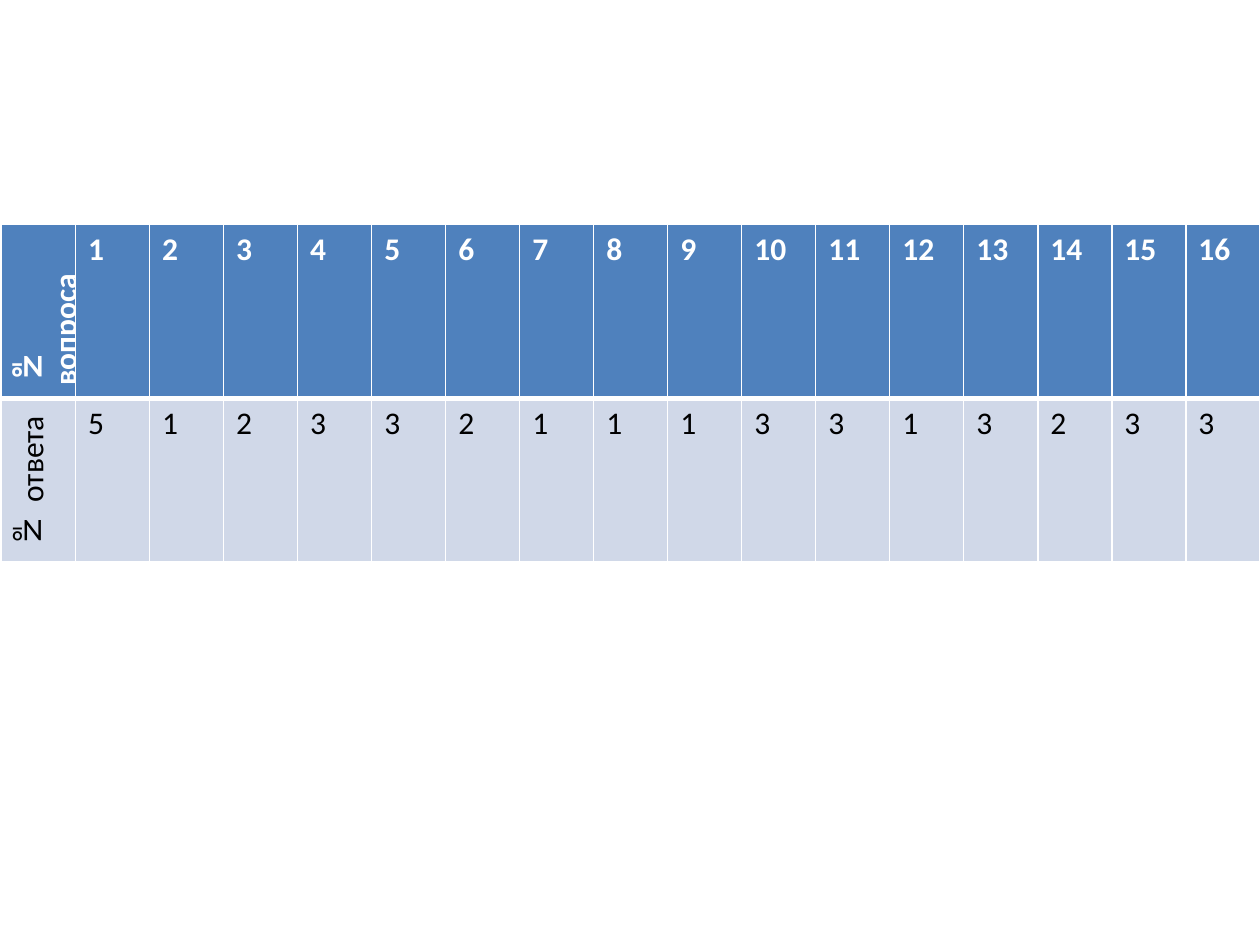
import pptx
import pptx.dml.color
import pptx.oxml
import pptx.oxml.ns
import pptx.util

Pt = pptx.util.Pt
WHITE = "FFFFFF"
ANSWERS = [5, 1, 2, 3, 3, 2, 1, 1, 1, 3, 3, 1, 3, 2, 3, 3]


def color(code):
    return pptx.dml.color.RGBColor.from_string(code)


def write(frame, text, size=18, font="Calibri", ink="000000", bold=False):
    run = frame.paragraphs[0].add_run()
    run.text = text
    run.font.size = Pt(size)
    run.font.name = font
    run.font.bold = bold
    run.font.color.rgb = color(ink)


def border(cell, side, width, code=WHITE):
    space = pptx.oxml.ns.nsdecls("a")
    line = pptx.oxml.parse_xml(
        f'<a:ln{side} {space} w="{Pt(width)}"><a:solidFill>'
        f'<a:srgbClr val="{code}"/></a:solidFill></a:ln{side}>'
    )
    cell._tc.get_or_add_tcPr().append(line)


def paint(cell, fill, widths):
    for side, width in zip("LRTB", widths):
        border(cell, side, width)
    cell.fill.solid()
    cell.fill.fore_color.rgb = color(fill)


def turn(cell):
    cell._tc.get_or_add_tcPr().set("vert", "vert270")


def fill_row(table, index, texts, fill, widths, **style):
    for col, text in enumerate(texts):
        cell = table.cell(index, col)
        paint(cell, fill, widths)
        write(cell.text_frame, str(text), **style)
    turn(table.cell(index, 0))


def add_grid(slide, left, top, width, heights, count):
    frame = slide.shapes.add_table(
        len(heights), count, Pt(left), Pt(top), Pt(width), Pt(sum(heights))
    )
    table = frame.table
    for row, height in zip(table.rows, heights):
        row.height = Pt(height)
    for col in table.columns:
        col.width = Pt(width / count)
    return table


def main():
    deck = pptx.Presentation()
    deck.slide_width, deck.slide_height = Pt(720), Pt(540)
    slide = deck.slides.add_slide(deck.slide_layouts[6])
    heads = ["№ вопроса", *range(1, len(ANSWERS) + 1)]
    table = add_grid(slide, 0.9, 128.2, 719.1, [99.4, 93.6], len(heads))
    fill_row(table, 0, heads, "4F81BD", (1, 1, 1, 3), ink=WHITE, bold=True)
    fill_row(table, 1, ["№ ответа", *ANSWERS], "D0D8E8", (1, 1, 3, 1))
    deck.save("out.pptx")


if __name__ == "__main__":
    main()
